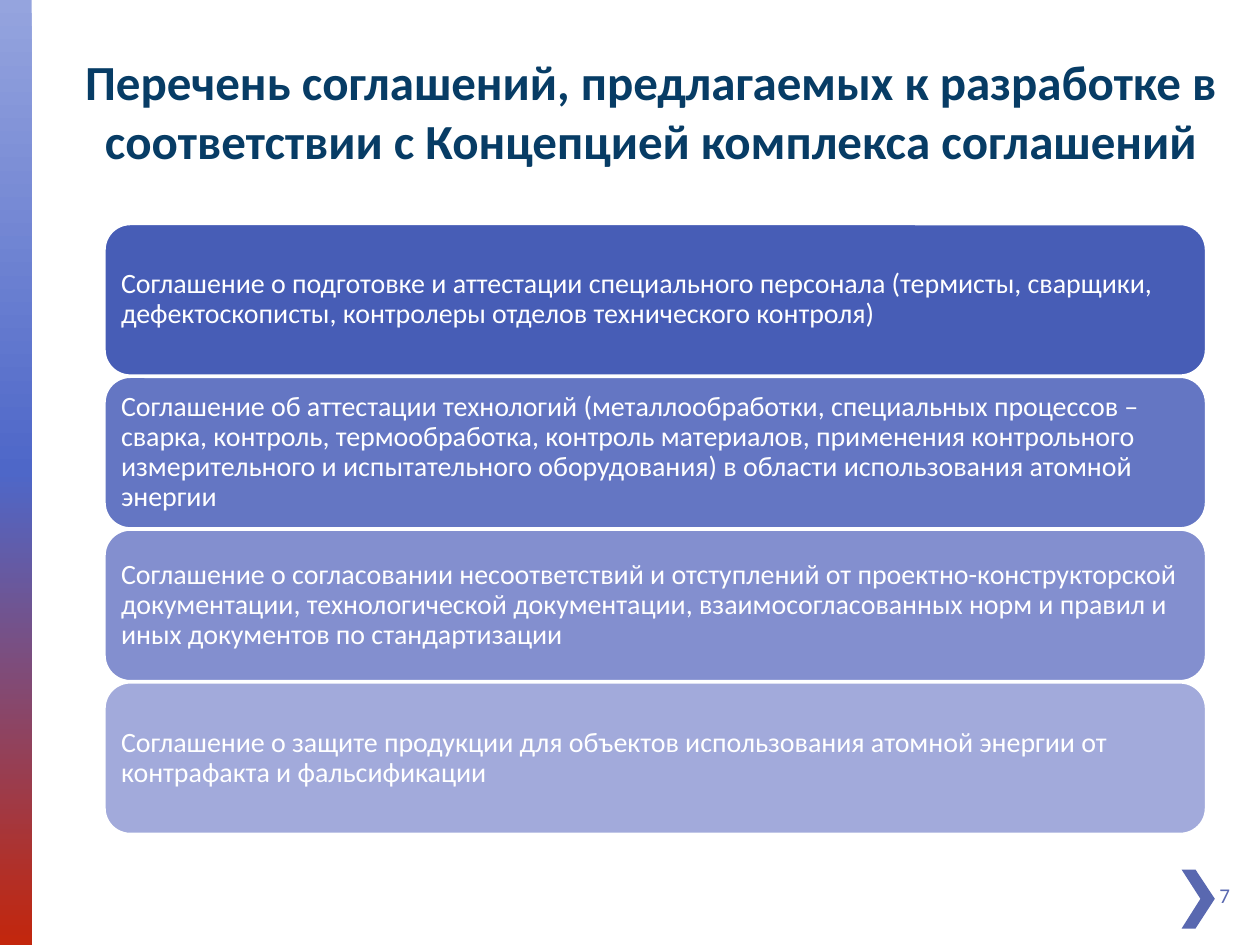
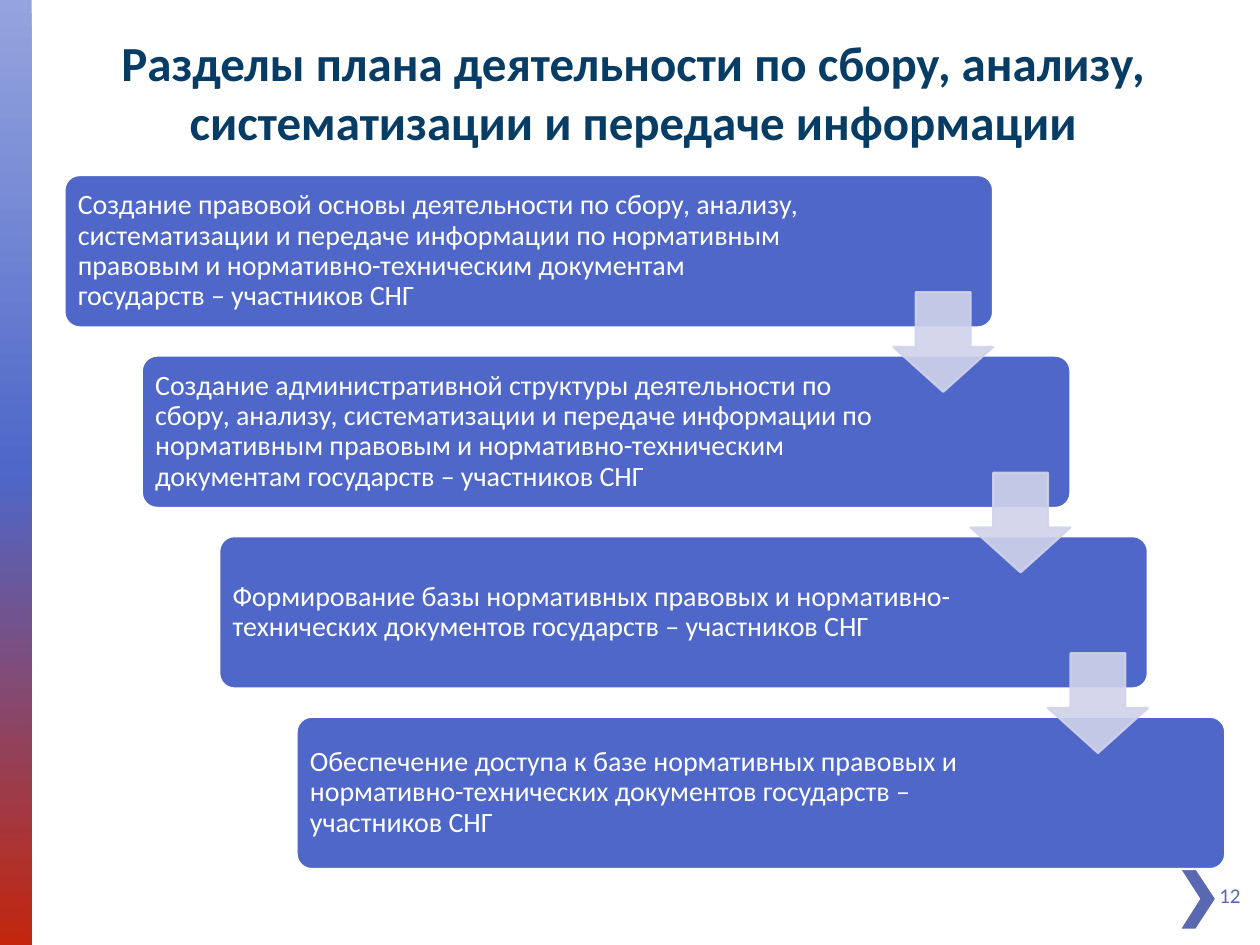
from copy import deepcopy

from lxml import etree
from pptx import Presentation
from pptx.dml.color import RGBColor
from pptx.enum.shapes import MSO_SHAPE
from pptx.enum.text import MSO_ANCHOR, PP_ALIGN
from pptx.oxml.ns import qn
from pptx.util import Cm, Pt

RECTANGLE = MSO_SHAPE.RECTANGLE
ROUNDED = MSO_SHAPE.ROUNDED_RECTANGLE
DOWN_ARROW = MSO_SHAPE.DOWN_ARROW
TOP, MIDDLE = MSO_ANCHOR.TOP, MSO_ANCHOR.MIDDLE
LEFT, CENTER = PP_ALIGN.LEFT, PP_ALIGN.CENTER

WHITE = RGBColor(0xFF, 0xFF, 0xFF)
NAVY = RGBColor(0x07, 0x3C, 0x65)
BLUE = RGBColor(0x4E, 0x67, 0xC8)
SLATE = RGBColor(0x59, 0x68, 0xB0)
PALE = RGBColor(0xD0, 0xD3, 0xEB)
BAND_STOPS = [
    (0, RGBColor(0x95, 0xA4, 0xDE)),
    (0.5, BLUE),
    (1, RGBColor(0xC3, 0x26, 0x0C)),
]
LIST_SHADES = [
    RGBColor(0x47, 0x5D, 0xB6),
    RGBColor(0x64, 0x76, 0xC3),
    RGBColor(0x83, 0x8F, 0xCF),
    RGBColor(0xA2, 0xAA, 0xDB),
]

FONT = "Calibri"
PAGE_WIDTH, PAGE_HEIGHT = 25.4, 19.05
CHEVRON = [(24.1, 17.53), (23.82, 17.53), (24.2, 18.12), (23.82, 18.72),
           (24.1, 18.72), (24.49, 18.12)]

AGREEMENTS = [
    "Соглашение о подготовке и аттестации специального персонала (термисты, "
    "сварщики, дефектоскописты, контролеры отделов технического контроля)",
    "Соглашение об аттестации технологий (металлообработки, специальных "
    "процессов – сварка, контроль, термообработка, контроль материалов, "
    "применения контрольного измерительного и испытательного оборудования) "
    "в области использования атомной энергии",
    "Соглашение о согласовании несоответствий и отступлений от "
    "проектно-конструкторской документации, технологической документации, "
    "взаимосогласованных норм и правил и иных документов по стандартизации",
    "Соглашение о защите продукции для объектов использования атомной "
    "энергии от контрафакта и фальсификации",
]
PLAN_STEPS = [
    "Создание правовой основы деятельности по сбору, анализу, систематизации "
    "и передаче информации по нормативным правовым и нормативно-техническим "
    "документам государств – участников СНГ",
    "Создание административной структуры деятельности по сбору, анализу, "
    "систематизации и передаче информации по нормативным правовым и "
    "нормативно-техническим документам государств – участников СНГ",
    "Формирование базы нормативных правовых и нормативно-технических "
    "документов государств – участников СНГ",
    "Обеспечение доступа к базе нормативных правовых и "
    "нормативно-технических документов государств – участников СНГ",
]


class SlideBuilder:
    """Adds styled elements to the current slide; lengths are centimetres."""

    def __init__(self):
        self.deck = Presentation()
        self.deck.slide_width = Cm(PAGE_WIDTH)
        self.deck.slide_height = Cm(PAGE_HEIGHT)
        self.page = None

    def start_page(self, number):
        self.page = self.deck.slides.add_slide(self.deck.slide_layouts[6])
        self.add_band()
        self.add_chevron()
        self.add_text(str(number), (24.33, 17.53, 1.07, 1.02), 12, SLATE,
                      anchor=MIDDLE)

    def add_shape(self, kind, place, color=None, outline=None):
        shape = self.page.shapes.add_shape(kind, *map(Cm, place))
        self.paint(shape, color, outline)
        return shape

    def paint(self, shape, color, outline=None):
        shape.shadow.inherit = False
        if color is not None:
            shape.fill.solid()
            shape.fill.fore_color.rgb = color
        if outline is None:
            shape.line.fill.background()
        else:
            shape.line.color.rgb = outline
            shape.line.width = Pt(1.25)

    def add_band(self):
        band = self.add_shape(RECTANGLE, (0, 0, 0.64, PAGE_HEIGHT))
        band.fill.gradient()
        band.fill.gradient_angle = 270
        stop_list = next(band.element.iter(qn("a:gsLst")))
        stop_list.append(deepcopy(stop_list[0]))
        for stop, (position, color) in zip(band.fill.gradient_stops, BAND_STOPS):
            stop.position = position
            stop.color.rgb = color

    def add_chevron(self):
        points = [(Cm(x), Cm(y)) for x, y in CHEVRON]
        outline = self.page.shapes.build_freeform(*points[0])
        outline.add_line_segments(points[1:], close=True)
        self.paint(outline.convert_to_shape(), SLATE)

    def set_text(self, frame, text, size, color, align=LEFT, anchor=TOP):
        frame.word_wrap = True
        frame.vertical_anchor = anchor
        para = frame.paragraphs[0]
        para.text = text
        para.alignment = align
        para.font.name = FONT
        para.font.size = Pt(size)
        para.font.color.rgb = color
        return para

    def add_text(self, text, place, size, color, **layout):
        box = self.page.shapes.add_textbox(*map(Cm, place))
        return self.set_text(box.text_frame, text, size, color, **layout)

    def add_title(self, text, place):
        self.add_text(text, place, 28, NAVY, align=CENTER).font.bold = True

    def add_panel(self, text, place, color, corner, right_margin=0.18):
        panel = self.add_shape(ROUNDED, place, color, WHITE)
        panel.adjustments[0] = corner
        frame = panel.text_frame
        frame.margin_left = frame.margin_top = frame.margin_bottom = Cm(0.18)
        frame.margin_right = Cm(right_margin)
        para = self.set_text(frame, text, 16, WHITE, anchor=MIDDLE)
        para.line_spacing = 0.9

    def add_down_arrow(self, left, top, size):
        arrow = self.add_shape(DOWN_ARROW, (left, top, size, size), PALE, PALE)
        arrow.adjustments[0] = 0.55
        arrow.adjustments[1] = 0.45
        for color in arrow.element.spPr.iter(qn("a:srgbClr")):
            etree.SubElement(color, qn("a:alpha"), val="90000")


def build_agreements(builder):
    builder.start_page(7)
    for row, (text, shade) in enumerate(zip(AGREEMENTS, LIST_SHADES)):
        place = (2.11, 4.52 + 3.08 * row, 22.2, 3.05)
        builder.add_panel(text, place, shade, 0.17)
    builder.add_title(
        "Перечень соглашений, предлагаемых к разработке в соответствии "
        "с Концепцией комплекса соглашений", (0.91, 0.91, 24.41, 2.64))


def build_plan(builder):
    step_right, step_down = 1.56, 3.64
    builder.start_page(12)
    for step, text in enumerate(PLAN_STEPS):
        place = (1.3 + step_right * step, 3.53 + step_down * step, 18.72, 3.07)
        builder.add_panel(text, place, BLUE, 0.1, right_margin=3.68)
    for step in range(len(PLAN_STEPS) - 1):
        builder.add_down_arrow(18.01 + step_right * step,
                               5.89 + step_down * step, 2.01)
    builder.add_title(
        "Разделы плана деятельности по сбору, анализу, систематизации "
        "и передаче информации", (0.86, 0.53, 23.8, 2.64))


def main():
    builder = SlideBuilder()
    build_agreements(builder)
    build_plan(builder)
    builder.deck.save("out.pptx")


if __name__ == "__main__":
    main()
